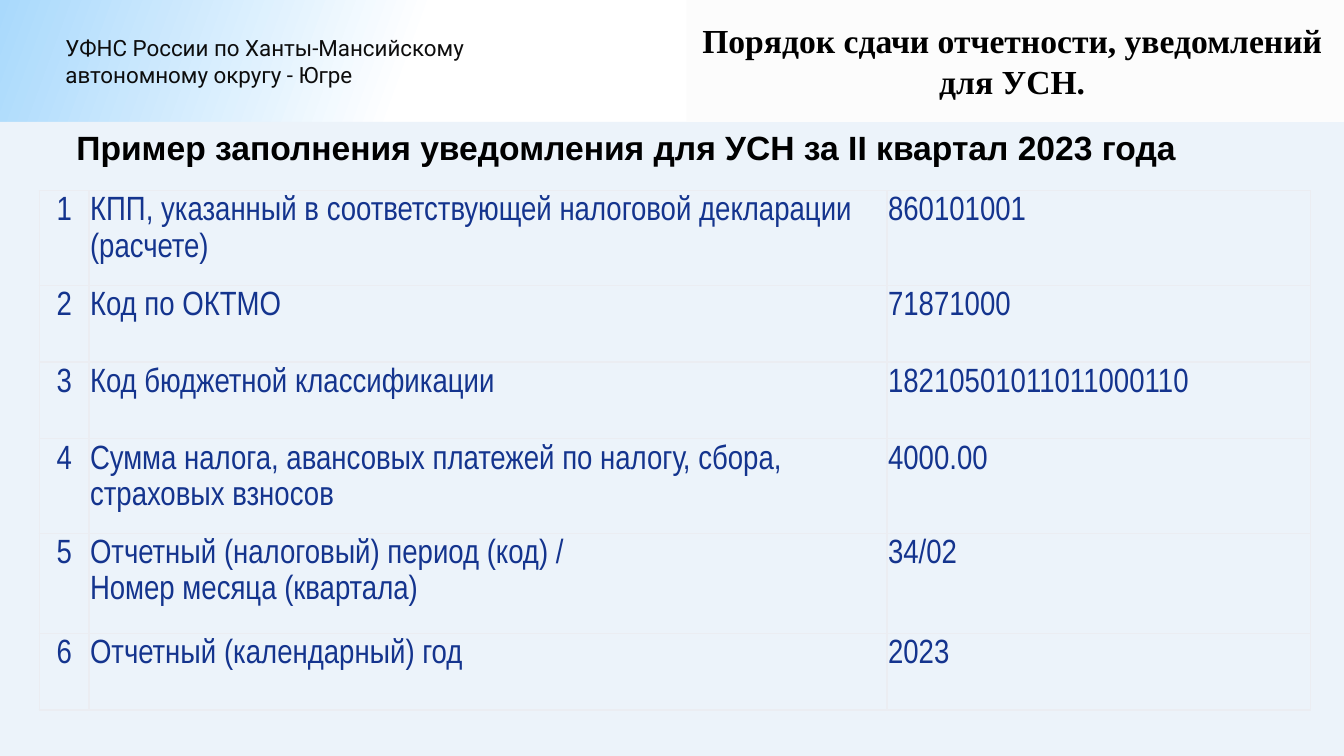
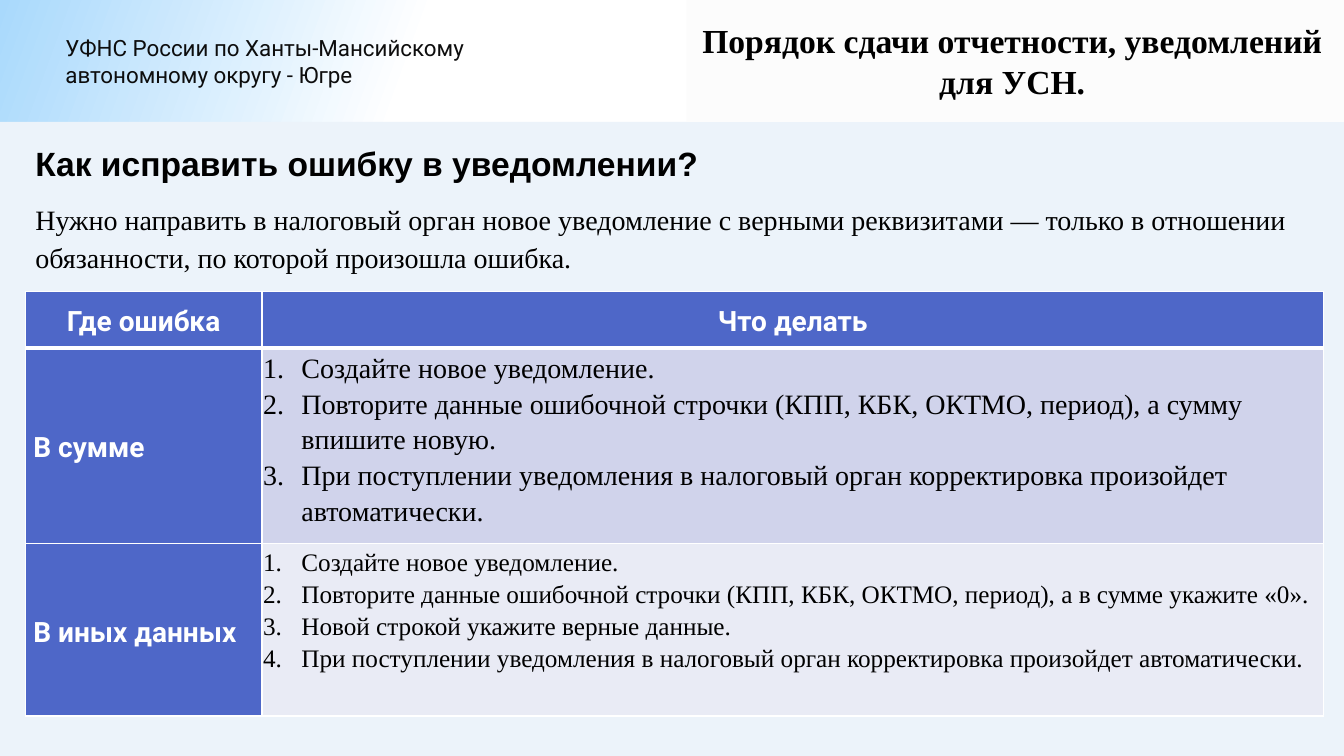
from dataclasses import dataclass

import pptx
import pptx.dml.color
import pptx.enum.shapes
import pptx.enum.text
import pptx.oxml
import pptx.oxml.ns
import pptx.util
from lxml import etree

ALIGN = pptx.enum.text.PP_ALIGN
ANCHOR = pptx.enum.text.MSO_ANCHOR


@dataclass(frozen=True)
class Style:
    font: str
    size: int
    color: str
    bold: bool = False


class Theme:
    sky = "A9D9FC"
    white = "FFFFFF"
    panel = "ECF3FA"
    title_panel = "FCFCFC"
    accent = "4E67C8"
    row_fills = ("D0D3EB", "E9EBF5")
    grid_line = "EBEDF2"
    title = Style("Times New Roman", 24, "000000", True)
    office = Style("Roboto", 16, "0D0D0D")
    heading = Style("Arial", 24, "000000", True)
    body = Style("Times New Roman", 20, "000000")
    small_body = Style("Times New Roman", 18, "000000")
    field = Style("Arial Narrow", 24, "14348E")
    label = Style("Roboto", 20, "FFFFFF", True)
    line_spacing = 1.15
    space_after = 10
    cell_margin = 0.01
    label_margin = 0.08
    list_indent = 0.38


WIDTH = pptx.util.Inches(13.33)
HEIGHT = pptx.util.Inches(7.5)
COLUMNS, ROWS = 32, 18

TITLE = "Порядок сдачи отчетности, уведомлений для УСН."
OFFICE = "УФНС России по Ханты-Мансийскому автономному округу - Югре"
FIELDS = [
    ("КПП, указанный в соответствующей налоговой декларации (расчете)", "860101001"),
    ("Код по ОКТМО", "71871000"),
    ("Код бюджетной классификации", "18210501011011000110"),
    ("Сумма налога, авансовых платежей по налогу, сбора, страховых взносов", "4000.00"),
    ("Отчетный (налоговый) период (код) /\vНомер месяца (квартала)", "34/02"),
    ("Отчетный (календарный) год", "2023"),
]
CREATE = "Создайте новое уведомление."
REPEAT = "Повторите данные ошибочной строчки (КПП, КБК, ОКТМО, период), "
AUTOMATIC = "При поступлении уведомления в налоговый орган корректировка произойдет автоматически."
CORRECTIONS = [
    ("В сумме", [CREATE, REPEAT + "а сумму впишите новую.", AUTOMATIC], Theme.body),
    ("В иных данных",
     [CREATE, REPEAT + "а в сумме укажите «0».", "Новой строкой укажите верные данные.", AUTOMATIC],
     Theme.small_body),
]


def rgb(color):
    return pptx.dml.color.RGBColor.from_string(color)


def across(columns):
    return round(WIDTH * columns / COLUMNS)


def down(rows):
    return round(HEIGHT * rows / ROWS)


def area(left, top, width, height):
    return across(left), down(top), across(width), down(height)


def format_paragraph(paragraph, style, align=ALIGN.LEFT, spacing=1.0, after=0):
    paragraph.alignment = align
    paragraph.line_spacing = spacing
    paragraph.space_before = pptx.util.Pt(0)
    paragraph.space_after = pptx.util.Pt(after)
    for run in paragraph.runs:
        run.font.name = style.font
        run.font.size = pptx.util.Pt(style.size)
        run.font.bold = style.bold
        run.font.color.rgb = rgb(style.color)


def set_bullet(paragraph, tag, indent=0, **attributes):
    properties = paragraph._p.get_or_add_pPr()
    distance = pptx.util.Inches(indent)
    properties.set("marL", str(distance))
    properties.set("indent", str(-distance))
    etree.SubElement(properties, pptx.oxml.ns.qn(tag), **attributes)


def fill_placeholder(placeholder, box, texts, styles, align=ALIGN.LEFT,
                     anchor=ANCHOR.TOP, spacing=1.0, after=0):
    placeholder.left, placeholder.top, placeholder.width, placeholder.height = box
    text_frame = placeholder.text_frame
    text_frame.text = "\n".join(texts)
    text_frame.auto_size = pptx.enum.text.MSO_AUTO_SIZE.NONE
    text_frame.vertical_anchor = anchor
    for paragraph, style in zip(text_frame.paragraphs, styles):
        set_bullet(paragraph, "a:buNone")
        format_paragraph(paragraph, style, align, spacing, after)


def add_panel(slide, box, color):
    shape = slide.shapes.add_shape(pptx.enum.shapes.MSO_SHAPE.RECTANGLE, *box)
    shape.shadow.inherit = False
    shape.fill.solid()
    shape.fill.fore_color.rgb = rgb(color)
    shape.line.fill.background()
    return shape


def add_office_name(slide):
    shape = slide.shapes.add_textbox(*area(1.32, 0.7, 11.52, 1.54))
    shape.text_frame.word_wrap = True
    shape.text_frame.text = OFFICE
    format_paragraph(shape.text_frame.paragraphs[0], Theme.office)
    return shape


def decorate_layout(layout, slide):
    fill = layout.slide_master.background.fill
    fill.gradient()
    fill.gradient_angle = 340
    for stop, color, position in zip(fill.gradient_stops, (Theme.sky, Theme.white), (0, 0.27)):
        stop.color.rgb = rgb(color)
        stop.position = position
    shapes = [
        add_office_name(slide),
        add_panel(slide, area(0, 2.9, COLUMNS, ROWS - 2.9), Theme.panel),
        add_panel(slide, area(16.34, 0, COLUMNS - 16.34, 2.9), Theme.title_panel),
    ]
    for index, shape in enumerate(shapes, start=2):
        layout.shapes.element.insert(index, shape.element)


def add_title(slide):
    fill_placeholder(slide.shapes.title, area(16.2, 0.36, 15.8, 2.18),
                     [TITLE], [Theme.title], ALIGN.CENTER)


def add_plain_table(slide, left, top, widths, heights):
    box = area(left, top, sum(widths), sum(heights))
    table = slide.shapes.add_table(len(heights), len(widths), *box).table
    table.first_row = False
    table.horz_banding = False
    for column, width in zip(table.columns, widths):
        column.width = across(width)
    for row, height in zip(table.rows, heights):
        row.height = down(height)
    return table


def set_borders(cell, color, top=1, bottom=1):
    properties = cell._tc.get_or_add_tcPr()
    for side, width in (("L", 1), ("R", 1), ("T", top), ("B", bottom)):
        line = etree.SubElement(properties, pptx.oxml.ns.qn(f"a:ln{side}"),
                                w=str(pptx.util.Pt(width)))
        fill = etree.SubElement(line, pptx.oxml.ns.qn("a:solidFill"))
        etree.SubElement(fill, pptx.oxml.ns.qn("a:srgbClr"), val=color)


def fill_cell(cell, text, style, color=None, align=ALIGN.LEFT, anchor=ANCHOR.TOP,
              left_margin=Theme.cell_margin, numbered=False):
    margin = pptx.util.Inches(Theme.cell_margin)
    cell.margin_top = cell.margin_right = cell.margin_bottom = margin
    cell.margin_left = pptx.util.Inches(left_margin)
    cell.vertical_anchor = anchor
    if color:
        cell.fill.solid()
        cell.fill.fore_color.rgb = rgb(color)
    else:
        cell.fill.background()
    cell.text_frame.text = text
    for paragraph in cell.text_frame.paragraphs:
        if numbered:
            set_bullet(paragraph, "a:buAutoNum", Theme.list_indent, type="arabicPeriod")
        format_paragraph(paragraph, style, align, Theme.line_spacing)


def add_field_table(slide):
    table = add_plain_table(slide, 0.94, 4.54, (1.18, 19, 10.08),
                            (2.25, 1.83, 1.83, 2.25, 2.38, 1.83))
    for row, (name, value) in enumerate(FIELDS):
        for column, text in enumerate((str(row + 1), name, value)):
            cell = table.cell(row, column)
            set_borders(cell, Theme.grid_line)
            fill_cell(cell, text, Theme.field, align=ALIGN.LEFT if column else ALIGN.CENTER)


def add_correction_table(slide):
    table = add_plain_table(slide, 0.6, 6.94, (5.64, 25.27), (1.34, 4.67, 4.1))
    for column, text in enumerate(("Где ошибка", "Что делать")):
        cell = table.cell(0, column)
        set_borders(cell, Theme.white, bottom=3)
        fill_cell(cell, text, Theme.label, Theme.accent, ALIGN.CENTER, ANCHOR.MIDDLE)
    for row, (place, steps, style) in enumerate(CORRECTIONS, start=1):
        label, actions = table.cell(row, 0), table.cell(row, 1)
        for cell in (label, actions):
            set_borders(cell, Theme.white, top=3 if row == 1 else 1)
        fill_cell(label, place, Theme.label, Theme.accent, anchor=ANCHOR.MIDDLE,
                  left_margin=Theme.label_margin)
        fill_cell(actions, "\n".join(steps), style, Theme.row_fills[row - 1], numbered=True)


def build_example_slide(slide):
    add_title(slide)
    fill_placeholder(slide.placeholders[1], area(1.58, 2.9, 27.38, 1.2),
                     ["Пример заполнения уведомления для УСН за II квартал 2023 года"],
                     [Theme.heading], anchor=ANCHOR.MIDDLE)
    add_field_table(slide)


def build_correction_slide(slide):
    add_title(slide)
    fill_placeholder(slide.placeholders[1], area(0.6, 3.14, 30.84, 3.55),
                     ["Как исправить ошибку в уведомлении?",
                      "Нужно направить в налоговый орган новое уведомление с верными реквизитами "
                      "— только в отношении обязанности, по которой произошла ошибка."],
                     [Theme.heading, Theme.body],
                     spacing=Theme.line_spacing, after=Theme.space_after)
    add_correction_table(slide)


def main():
    presentation = pptx.Presentation()
    presentation.slide_width = WIDTH
    presentation.slide_height = HEIGHT
    layout = presentation.slide_layouts[1]
    example, correction = [presentation.slides.add_slide(layout) for _ in range(2)]
    decorate_layout(layout, example)
    build_example_slide(example)
    build_correction_slide(correction)
    presentation.save("out.pptx")


if __name__ == "__main__":
    main()
